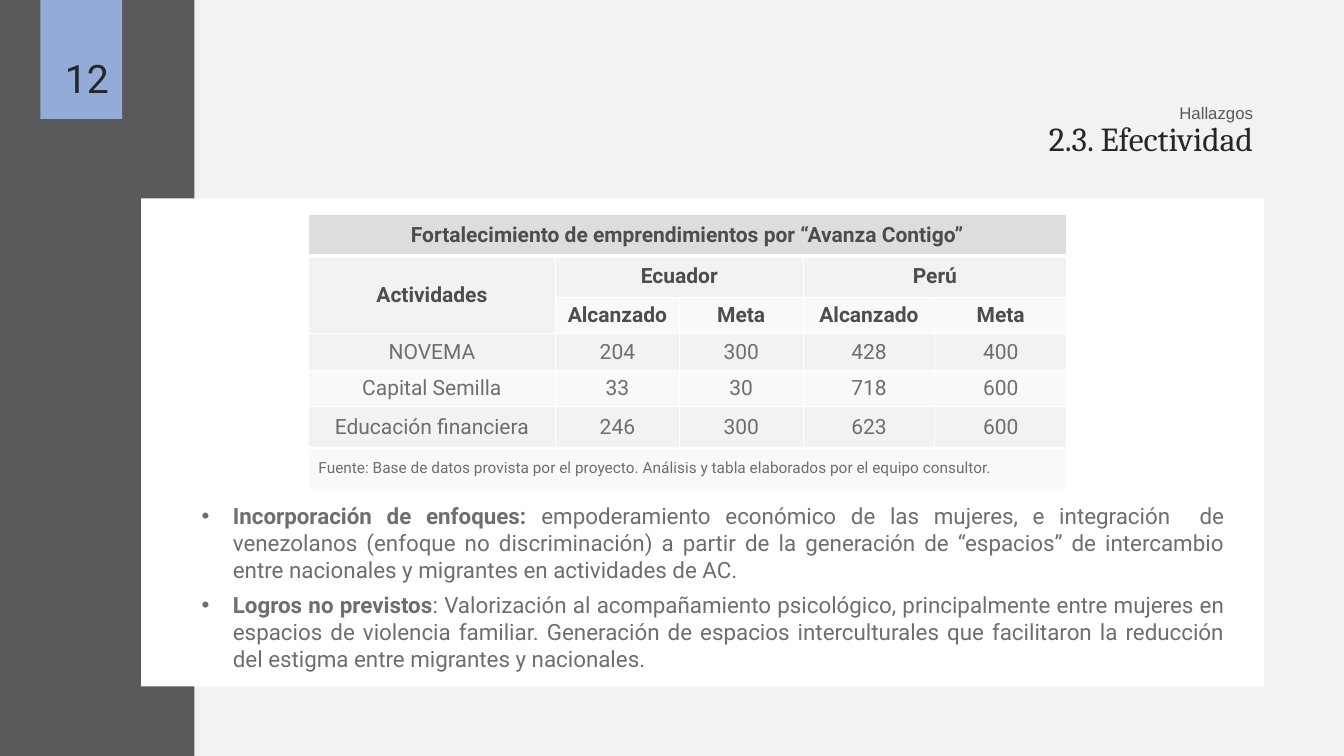
"""Build the slide on effectiveness findings: a results table and two bullets."""
import pptx
import pptx.util
import pptx.dml.color
import pptx.enum.shapes
import pptx.enum.text
import pptx.oxml.ns
import lxml.etree
from pptx.util import Cm


class Theme:
    back, dark, white, accent = "F2F2F2", "595959", "FFFFFF", "92ACD7"
    ink, strong, body = "262626", "4D4D4D", "6E6E6E"
    title_row, odd_row, even_row = "DDDDDD", "F2F2F2", "F9F9F9"
    sans, serif, plain = "Roboto", "Cambria", "Arial"
    number, title, text, cell, label, source = 28, 24, 16, 15, 12, 11


rgb = pptx.dml.color.RGBColor.from_string
align = pptx.enum.text.PP_ALIGN
qn = pptx.oxml.ns.qn


def add_block(shapes, left, top, width, height, color):
    sp = shapes.add_shape(pptx.enum.shapes.MSO_SHAPE.RECTANGLE,
                          Cm(left), Cm(top), Cm(width), Cm(height))
    sp.shadow.inherit = False
    sp.fill.solid()
    sp.fill.fore_color.rgb = rgb(color)
    sp.line.fill.background()


def style(p, alignment, size, color, font=Theme.sans, bold=False):
    p.alignment = alignment
    for r in p.runs:
        r.font.name = font
        r.font.size = pptx.util.Pt(size)
        r.font.bold = bold
        r.font.color.rgb = rgb(color)


prs = pptx.Presentation()
prs.slide_width, prs.slide_height = Cm(33.87), Cm(19.05)
s = prs.slides.add_slide(prs.slide_layouts[6])
s.background.fill.solid()
s.background.fill.fore_color.rgb = rgb(Theme.back)

add_block(s.shapes, 0, 0, 4.9, 19.05, Theme.dark)
add_block(s.shapes, 3.56, 5, 28.3, 12.3, Theme.white)

findings = [
    ("Incorporación de enfoques: ",
     "empoderamiento económico de las mujeres, e integración  de venezolanos "
     "(enfoque no discriminación) a partir de la generación de “espacios” de "
     "intercambio entre nacionales y migrantes en actividades de AC."),
    ("Logros no previstos",
     ": Valorización al acompañamiento psicológico, principalmente entre mujeres "
     "en espacios de violencia familiar. Generación de espacios interculturales "
     "que facilitaron la reducción del estigma entre migrantes y nacionales."),
]
tf = s.shapes.add_textbox(Cm(3.56), Cm(12.53), Cm(27.55), Cm(4.57)).text_frame
tf.word_wrap = True
for i, (lead, detail) in enumerate(findings):
    p = tf.add_paragraph() if i else tf.paragraphs[0]
    p.text = lead
    p.add_run().text = detail
    style(p, align.JUSTIFY, Theme.text, Theme.body)
    p.runs[0].font.bold = True
    p.space_before = pptx.util.Pt(6 * i)
    pPr = p._p.get_or_add_pPr()
    pPr.set("marL", str(Cm(2.06)))
    pPr.set("indent", str(-Cm(0.79)))
    color = lxml.etree.SubElement(pPr, qn("a:buClr"))
    lxml.etree.SubElement(color, qn("a:srgbClr"), val=Theme.body)
    lxml.etree.SubElement(pPr, qn("a:buFont"), typeface=Theme.plain)
    lxml.etree.SubElement(pPr, qn("a:buChar"), char="•")

badge = s.shapes.add_group_shape()
add_block(badge.shapes, 1.02, 0, 2.06, 3, Theme.accent)

labels = [
    (badge.shapes, "12", 1, 1.25, 2.38, 1.45,
     align.CENTER, Theme.number, Theme.ink, Theme.sans),
    (s.shapes, "2.3. Efectividad", 4.93, 2.85, 26.9, 1.28,
     align.RIGHT, Theme.title, Theme.ink, Theme.serif),
    (s.shapes, "Hallazgos", 23.14, 2.46, 8.69, 0.77,
     align.RIGHT, Theme.label, Theme.dark, Theme.plain),
]
for shapes, text, left, top, width, height, *look in labels:
    tf = shapes.add_textbox(Cm(left), Cm(top), Cm(width), Cm(height)).text_frame
    tf.word_wrap = True
    tf.text = text
    style(tf.paragraphs[0], *look)

rows = [
    ["Fortalecimiento de emprendimientos por “Avanza Contigo”", "", "", "", ""],
    ["Actividades", "Ecuador", "", "Perú", ""],
    ["", "Alcanzado", "Meta", "Alcanzado", "Meta"],
    ["NOVEMA", "204", "300", "428", "400"],
    ["Capital Semilla", "33", "30", "718", "600"],
    ["Educación financiera", "246", "300", "623", "600"],
    ["Fuente: Base de datos provista por el proyecto. Análisis y tabla "
     "elaborados por el equipo consultor.", "", "", "", ""],
]
widths = [6.23, 3.12, 3.12, 3.32, 3.32]
heights = [1.04, 1.04, 0.92, 0.92, 0.92, 1.04, 1.04]
merges = [(0, 0, 0, 4), (1, 0, 2, 0), (1, 1, 1, 2), (1, 3, 1, 4), (6, 0, 6, 4)]
last = len(rows) - 1

tb = s.shapes.add_table(len(rows), len(widths), Cm(7.77), Cm(5.41),
                        Cm(sum(widths)), Cm(sum(heights))).table
tb.first_row = tb.horz_banding = False
for col, width in zip(tb.columns, widths):
    col.width = Cm(width)
for row, height in zip(tb.rows, heights):
    row.height = Cm(height)

for i, row in enumerate(rows):
    fill = Theme.title_row if i == 0 else Theme.odd_row if i % 2 else Theme.even_row
    for j, text in enumerate(row):
        cell = tb.cell(i, j)
        cell.text = text
        cell.vertical_anchor = pptx.enum.text.MSO_ANCHOR.MIDDLE
        style(cell.text_frame.paragraphs[0],
              align.LEFT if i == last else align.CENTER,
              Theme.source if i == last else Theme.cell,
              Theme.strong if i < 3 else Theme.body, bold=i < 3)
        tcPr = cell._tc.get_or_add_tcPr()
        for side in ("L", "R", "T", "B"):
            thick = (i, side) in ((0, "B"), (1, "T"))
            ln = lxml.etree.SubElement(tcPr, qn("a:ln" + side),
                                       w=str(pptx.util.Pt(3 if thick else 1)))
            solid = lxml.etree.SubElement(ln, qn("a:solidFill"))
            lxml.etree.SubElement(solid, qn("a:srgbClr"), val=Theme.white)
        cell.fill.solid()
        cell.fill.fore_color.rgb = rgb(fill)

for top, left, bottom, right in merges:
    tb.cell(top, left).merge(tb.cell(bottom, right))

prs.save("out.pptx")
